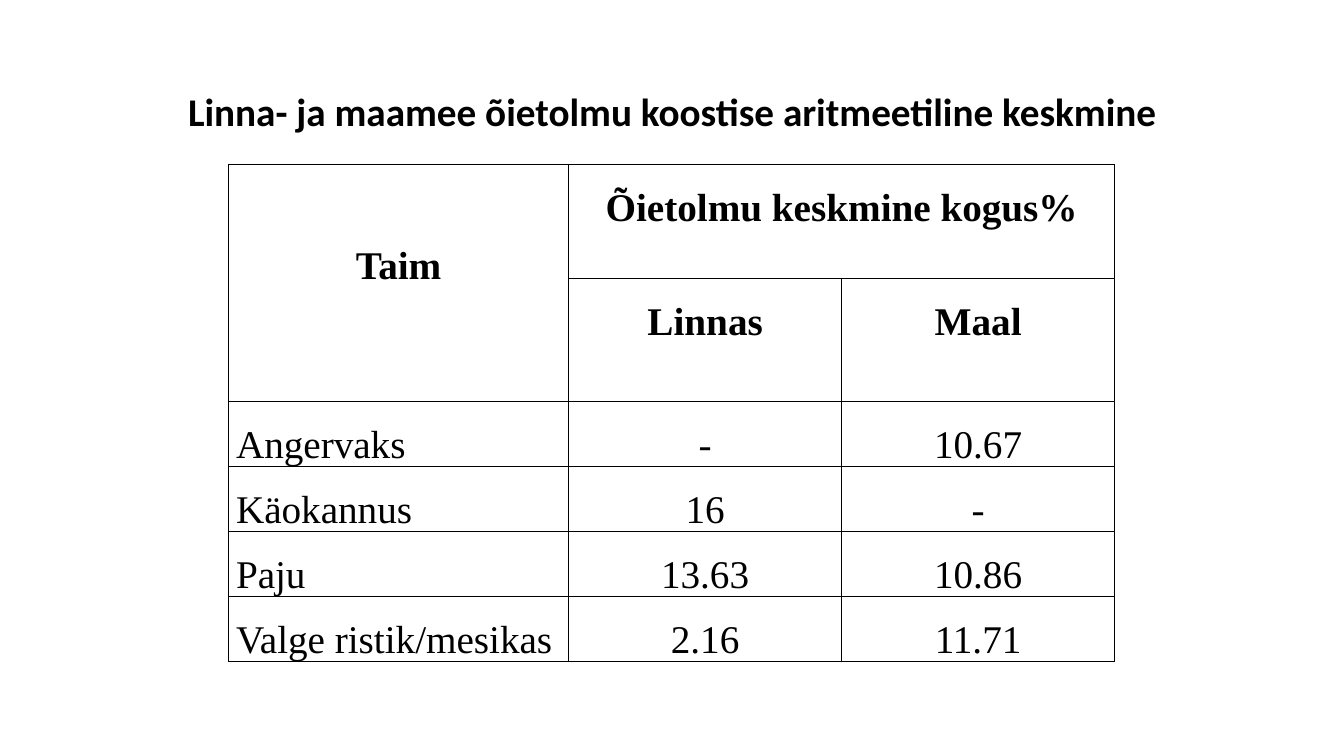
from lxml import etree
from pptx import Presentation
from pptx.dml.color import RGBColor
from pptx.enum.text import MSO_ANCHOR, PP_ALIGN
from pptx.oxml.ns import qn
from pptx.util import Pt

TOP, MIDDLE = MSO_ANCHOR.TOP, MSO_ANCHOR.MIDDLE
LEFT, CENTER = PP_ALIGN.LEFT, PP_ALIGN.CENTER

TITLE = "Linna- ja maamee õietolmu koostise aritmeetiline keskmine"
ROWS = [
    ("Taim", "Õietolmu keskmine kogus%", ""),
    ("", "Linnas", "Maal"),
    ("Angervaks", "-", "10.67"),
    ("Käokannus", "16", "-"),
    ("Paju", "13.63", "10.86"),
    ("Valge ristik/mesikas", "2.16", "11.71"),
]
HEADER_ROWS = 2
COLUMN_WIDTHS = [243, 195, 195]
ROW_HEIGHTS = [81.4, 87.8] + [46.4] * 4
TABLE_LEFT, TABLE_TOP = 163.2, 117.5
PLANT_HEADER_DROP = 41.4
BLACK = "000000"


def color(value):
    return RGBColor.from_string(value)


def format_text(para, font_name, bold, alignment, line_spacing):
    para.alignment = alignment
    para.line_spacing = line_spacing
    para.space_before = Pt(10)
    para.font.name = font_name
    para.font.size = Pt(28)
    para.font.bold = bold
    para.font.color.rgb = color(BLACK)


def add_borders(cell):
    properties = cell._tc.get_or_add_tcPr()
    for position, side in enumerate(("lnL", "lnR", "lnT", "lnB")):
        line = etree.Element(qn(f"a:{side}"), w=str(Pt(1)))
        fill = etree.SubElement(line, qn("a:solidFill"))
        etree.SubElement(fill, qn("a:srgbClr"), val=BLACK)
        properties.insert(position, line)


def add_title(page):
    title = page.shapes.title
    title.left, title.top, title.width, title.height = Pt(66), Pt(63), Pt(828), Pt(36)
    frame = title.text_frame
    frame.text = TITLE
    frame.word_wrap = True
    frame.vertical_anchor = MIDDLE
    frame.margin_top = frame.margin_bottom = 0
    format_text(frame.paragraphs[0], "Calibri", True, CENTER, 0.9)


def add_pollen_table(page):
    table = page.shapes.add_table(
        len(ROWS), len(COLUMN_WIDTHS), Pt(TABLE_LEFT), Pt(TABLE_TOP),
        Pt(sum(COLUMN_WIDTHS)), Pt(sum(ROW_HEIGHTS))).table
    table.first_row = table.horz_banding = False
    for column, width in zip(table.columns, COLUMN_WIDTHS):
        column.width = Pt(width)
    for row, height in zip(table.rows, ROW_HEIGHTS):
        row.height = Pt(height)
    for row_index, texts in enumerate(ROWS):
        header = row_index < HEADER_ROWS
        for column_index, text in enumerate(texts):
            cell = table.cell(row_index, column_index)
            cell.text = text
            cell.fill.background()
            cell.vertical_anchor = TOP
            cell.margin_left = cell.margin_right = Pt(5.4)
            cell.margin_top = cell.margin_bottom = 0
            alignment = CENTER if header or column_index else LEFT
            format_text(cell.text_frame.paragraphs[0], "Times New Roman",
                        header, alignment, 1.5)
            add_borders(cell)
    plant_header = table.cell(0, 0)
    plant_header.merge(table.cell(1, 0))
    plant_header.margin_top = Pt(PLANT_HEADER_DROP)
    table.cell(0, 1).merge(table.cell(0, 2))


def main():
    deck = Presentation()
    deck.slide_width, deck.slide_height = Pt(960), Pt(540)
    page = deck.slides.add_slide(deck.slide_layouts[5])
    add_title(page)
    add_pollen_table(page)
    deck.save("out.pptx")


if __name__ == "__main__":
    main()
